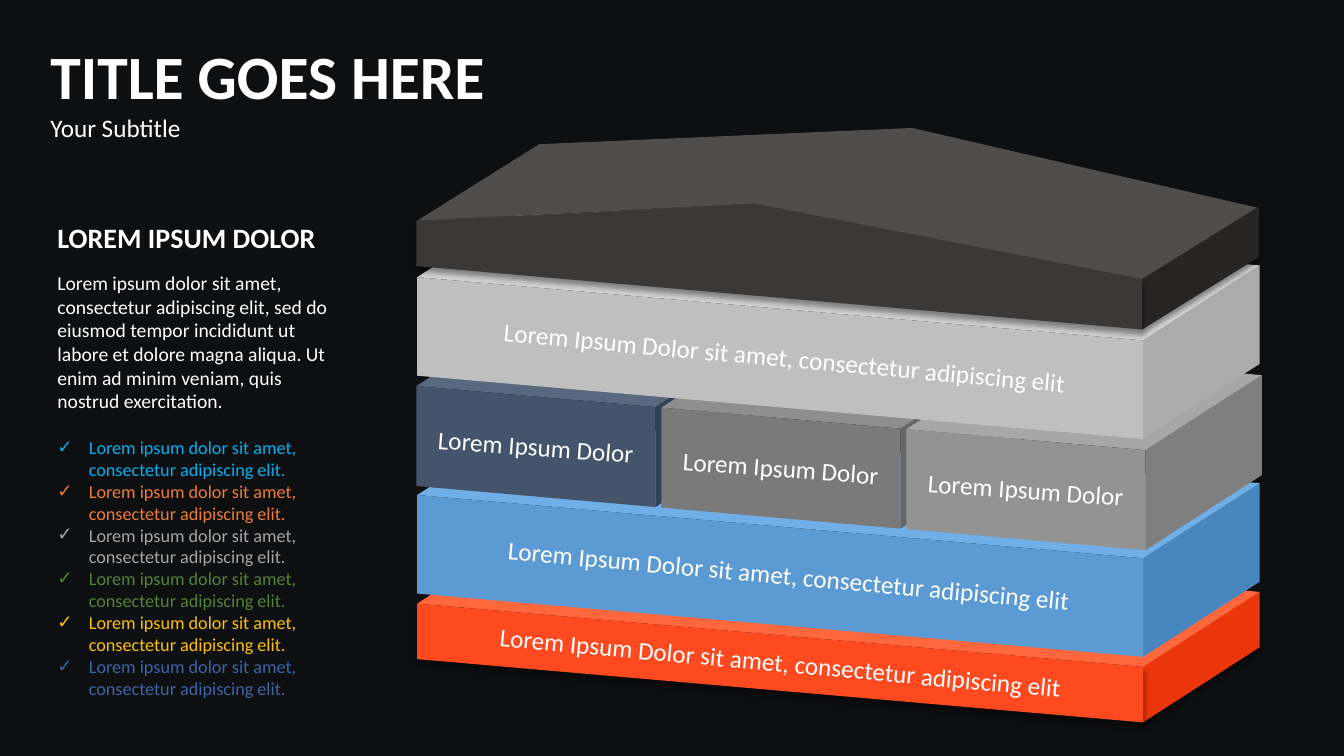
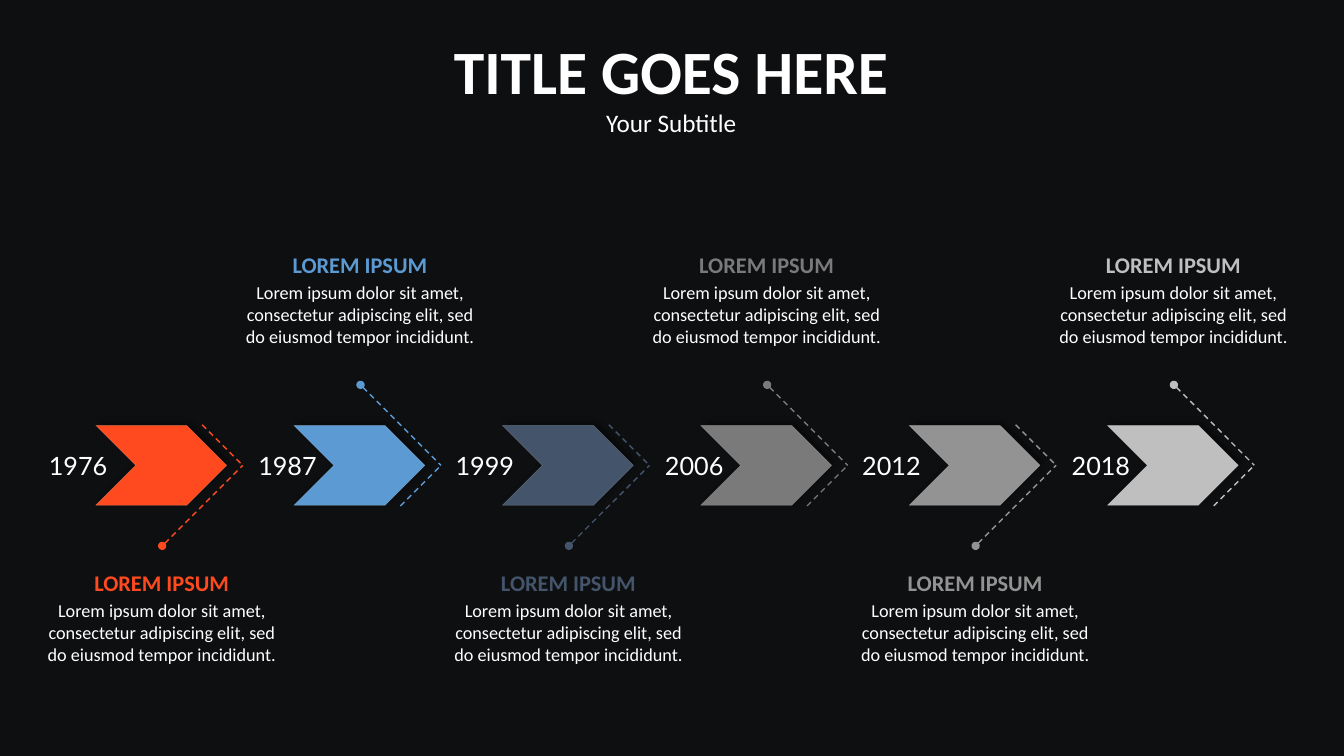
from lxml.etree import SubElement
from pptx import Presentation
from pptx.dml.color import RGBColor
from pptx.enum.dml import MSO_LINE_DASH_STYLE as Dash
from pptx.enum.shapes import MSO_CONNECTOR as Connector, MSO_SHAPE as Shape
from pptx.enum.text import MSO_ANCHOR as Anchor, MSO_AUTO_SIZE as AutoSize, PP_ALIGN as Align
from pptx.oxml.ns import qn
from pptx.util import Pt

BACKGROUND = RGBColor(0x0E, 0x0F, 0x11)
WHITE = RGBColor(0xFF, 0xFF, 0xFF)
ORANGE = RGBColor(0xFE, 0x4A, 0x1E)
ORANGE_TOP = RGBColor(0xFF, 0x68, 0x3C)
ORANGE_SIDE = RGBColor(0xEA, 0x36, 0x0A)
BLUE = RGBColor(0x5C, 0x9A, 0xD3)
BLUE_TOP = RGBColor(0x70, 0xAE, 0xE7)
BLUE_SIDE = RGBColor(0x48, 0x86, 0xBF)
SLATE = RGBColor(0x44, 0x54, 0x6B)
SLATE_TOP = RGBColor(0x58, 0x68, 0x7F)
SLATE_SIDE = RGBColor(0x30, 0x40, 0x57)
DARK_GRAY = RGBColor(0x7A, 0x7A, 0x7A)
DARK_GRAY_TOP = RGBColor(0x8E, 0x8E, 0x8E)
DARK_GRAY_SIDE = RGBColor(0x66, 0x66, 0x66)
GRAY = RGBColor(0x93, 0x93, 0x93)
GRAY_TOP = RGBColor(0xA7, 0xA7, 0xA7)
GRAY_SIDE = RGBColor(0x7F, 0x7F, 0x7F)
SILVER = RGBColor(0xBF, 0xBF, 0xBF)
SILVER_TOP = RGBColor(0xD3, 0xD3, 0xD3)
SILVER_SIDE = RGBColor(0xAB, 0xAB, 0xAB)
ROOF_TOP = RGBColor(0x4F, 0x4C, 0x4C)
ROOF_FRONT = RGBColor(0x3B, 0x38, 0x38)
ROOF_SIDE = RGBColor(0x27, 0x24, 0x24)
BULLET_COLORS = [
    RGBColor(0x00, 0xB0, 0xF0), RGBColor(0xED, 0x7D, 0x31), RGBColor(0xA5, 0xA5, 0xA5),
    RGBColor(0x54, 0x82, 0x35), RGBColor(0xFF, 0xC0, 0x00), RGBColor(0x3E, 0x64, 0xA6),
]

TITLE = "TITLE GOES HERE"
SUBTITLE = "Your Subtitle"
SIDE_HEADING = "LOREM IPSUM DOLOR"
SIDE_TEXT = (
    "Lorem ipsum dolor sit amet, consectetur adipiscing elit, sed do eiusmod tempor "
    "incididunt ut labore et dolore magna aliqua. Ut enim ad minim veniam, quis nostrud "
    "exercitation."
)
BULLET_TEXT = "Lorem ipsum dolor sit amet, consectetur adipiscing elit."
LONG_LABEL = "Lorem Ipsum Dolor sit amet, consectetur adipiscing elit"
SHORT_LABEL = "Lorem Ipsum Dolor"
EVENT_HEADING = "LOREM IPSUM"
EVENT_TEXT = (
    "Lorem ipsum dolor sit amet, consectetur adipiscing elit, sed do eiusmod tempor incididunt."
)
EVENTS = [
    ("1976", ORANGE), ("1987", BLUE), ("1999", SLATE),
    ("2006", DARK_GRAY), ("2012", GRAY), ("2018", SILVER),
]

WIDE = {"left": 298, "width": 518.5, "drop": 45.2, "label": LONG_LABEL,
        "label_width": 438, "angle": 5.3}
NARROW = {"width": 170.7, "drop": 15, "height": 71.4, "label": SHORT_LABEL,
          "label_width": 164, "angle": 4.2, "shift": 0}
NARROW_COLORS = [
    (SLATE, SLATE_TOP, SLATE_SIDE),
    (DARK_GRAY, DARK_GRAY_TOP, DARK_GRAY_SIDE),
    (GRAY, GRAY_TOP, GRAY_SIDE),
]
BLOCKS = [
    {**WIDE, "top": 431.2, "height": 39.6, "shift": 0, "shadow": True,
     "colors": (ORANGE, ORANGE_TOP, ORANGE_SIDE)},
    {**WIDE, "top": 353.6, "height": 70.4, "shift": 6,
     "colors": (BLUE, BLUE_TOP, BLUE_SIDE)},
    *({**NARROW, "left": 297.4 + 175 * index, "top": 275.8 + 15.4 * index, "colors": colors}
      for index, colors in enumerate(NARROW_COLORS)),
    {**WIDE, "top": 198, "height": 70.4, "shift": 3,
     "colors": (SILVER, SILVER_TOP, SILVER_SIDE)},
]
DEPTH_X, DEPTH_Y = 83.2, -53.6
ROOF = [
    ([(897.5, 147.8), (899.3, 148.3), (899.3, 183.6), (815.8, 235.4), (815.8, 198.7)],
     ROOF_SIDE, True),
    ([(539.3, 145.2), (815.8, 198.7), (815.8, 235.4), (297.4, 190.1), (297.4, 157.7)],
     ROOF_FRONT, True),
    ([(651.6, 91.4), (897.8, 148.3), (815.8, 199.2), (539.3, 145.4), (298, 157.7),
      (385.2, 103)], ROOF_TOP, False),
]

CHEVRON_WIDTH, CHEVRON_HEIGHT = 93.6, 57
EVENT_LEFT, PAIR_PITCH, UPPER_SHIFT = 68.4, 290.5, 141.6
AXIS = 332.4


def set_attributes(target, values):
    for name, value in values.items():
        setattr(target, name, value)


def write(shape, entries, insets=None):
    frame = shape.text_frame
    set_attributes(frame, {"word_wrap": True, "auto_size": AutoSize.NONE,
                           "vertical_anchor": Anchor.TOP})
    set_attributes(frame, insets or {})
    for index, (text, color, font, layout) in enumerate(entries):
        paragraph = frame.paragraphs[0] if index == 0 else frame.add_paragraph()
        run = paragraph.add_run()
        run.text = text
        set_attributes(paragraph, {"space_before": Pt(0), **layout})
        set_attributes(run.font, {"name": "Calibri", "bold": False, **font})
        run.font.color.rgb = color
    return frame


def place(shape, left, top, width, height):
    set_attributes(shape, {"left": Pt(left), "top": Pt(top),
                           "width": Pt(width), "height": Pt(height)})


def add_text(slide, left, top, width, height, entries, insets=None):
    box = slide.shapes.add_textbox(Pt(left), Pt(top), Pt(width), Pt(height))
    write(box, entries, insets)
    return box


def set_title(slide, left, top, width, alignment):
    place(slide.shapes.title, left, top, width, 82)
    layout = {"alignment": alignment}
    write(slide.shapes.title, [
        (TITLE, WHITE, {"size": Pt(44), "bold": True}, layout),
        (SUBTITLE, WHITE, {"size": Pt(18)}, layout),
    ])


def set_bullet(paragraph, character=None):
    properties = paragraph._p.get_or_add_pPr()
    indent = Pt(22.5) if character else 0
    properties.set("marL", str(indent))
    properties.set("indent", str(-indent))
    if character:
        SubElement(properties, qn("a:buChar")).set("char", character)
    else:
        SubElement(properties, qn("a:buNone"))


def add_shadow(shape, direction):
    effects = shape.element.spPr.find(qn("a:effectLst"))
    shadow = SubElement(effects, qn("a:outerShdw"), blurRad=str(Pt(4)), dist=str(Pt(3)),
                        dir=str(direction * 60000), algn="ctr", rotWithShape="0")
    color = SubElement(shadow, qn("a:srgbClr"), val="000000")
    SubElement(color, qn("a:alpha"), val="40000")


def add_face(slide, points, color, shadow=False):
    corners = [(Pt(x), Pt(y)) for x, y in points]
    builder = slide.shapes.build_freeform(*corners[0])
    builder.add_line_segments(corners[1:], close=True)
    face = builder.convert_to_shape()
    face.shadow.inherit = False
    face.fill.solid()
    face.fill.fore_color.rgb = color
    face.line.fill.background()
    if shadow:
        add_shadow(face, 90)
    return face


def add_block(slide, block):
    left, top, height = block["left"], block["top"], block["height"]
    right, right_top = left + block["width"], top + block["drop"]
    front, lid, side = block["colors"]
    shadow = block.get("shadow", False)
    back_left, back_right = (left + DEPTH_X, top + DEPTH_Y), (right + DEPTH_X, right_top + DEPTH_Y)
    back_bottom = (back_right[0], back_right[1] + height)
    start, corner = (left, top), (right, right_top)
    bottom = (right, right_top + height)
    label_left = (left + right - block["label_width"]) / 2 + block["shift"]
    label_top = (top + right_top + height) / 2 - 14.6
    label = add_text(slide, label_left, label_top, block["label_width"], 29,
                     [(block["label"], WHITE, {"size": Pt(18)}, {"alignment": Align.CENTER})])
    label.rotation = block["angle"]
    pieces = [
        add_face(slide, [corner, back_right, back_bottom, bottom], side, shadow),
        add_face(slide, [start, back_left, back_right, corner], lid),
        add_face(slide, [start, corner, bottom, (left, top + height)], front, shadow),
        label,
    ]
    slide.shapes.add_group_shape(pieces)


def build_layers(presentation):
    slide = presentation.slides.add_slide(presentation.slide_layouts[1])
    set_title(slide, 28.8, 23.8, 468, Align.LEFT)
    for block in BLOCKS:
        add_block(slide, block)
    slide.shapes.add_group_shape([add_face(slide, *face) for face in ROOF])
    body = slide.placeholders[1]
    place(body, 33.8, 154, 222.5, 373)
    bullets = [(BULLET_TEXT, color, {"size": Pt(13)}, {"space_before": Pt(0 if index else 17)})
               for index, color in enumerate(BULLET_COLORS)]
    frame = write(body, [
        (SIDE_HEADING, WHITE, {"size": Pt(20), "bold": True}, {}),
        (SIDE_TEXT, WHITE, {"size": Pt(14)}, {"space_before": Pt(12.2)}),
        *bullets,
    ])
    for index, paragraph in enumerate(frame.paragraphs):
        set_bullet(paragraph, "✓" if index > 1 else None)


def add_dashes(slide, start, end, color, dot=False):
    line = slide.shapes.add_connector(Connector.STRAIGHT, *(Pt(value) for value in start + end))
    line.line.color.rgb = color
    set_attributes(line.line, {"width": Pt(1), "dash_style": Dash.DASH})
    properties = line.element.spPr
    if dot:
        SubElement(properties.find(qn("a:ln")), qn("a:headEnd"), type="oval")
    SubElement(properties, qn("a:effectLst"))


def add_chevron(slide, left, color):
    chevron = slide.shapes.add_shape(Shape.CHEVRON, Pt(left), Pt(AXIS - CHEVRON_HEIGHT / 2),
                                     Pt(CHEVRON_WIDTH), Pt(CHEVRON_HEIGHT))
    chevron.shadow.inherit = False
    chevron.fill.solid()
    chevron.fill.fore_color.rgb = color
    chevron.line.color.rgb = WHITE
    chevron.line.width = Pt(0.5)
    line_color = chevron.element.spPr.find(qn("a:ln")).find(".//" + qn("a:srgbClr"))
    SubElement(line_color, qn("a:alpha"), val="15000")
    add_shadow(chevron, 315)


def add_event(slide, index, year, color):
    pair, upper = divmod(index, 2)
    left = EVENT_LEFT + PAIR_PITCH * pair + UPPER_SHIFT * upper
    side = -1 if upper else 1
    tip = (left + 105, AXIS)
    add_chevron(slide, left, color)
    add_dashes(slide, (left + 76, AXIS - side * 29), tip, color)
    add_dashes(slide, (left + 47.5, AXIS + side * 57.5), tip, color, dot=True)
    centered = {"alignment": Align.CENTER}
    no_insets = dict.fromkeys(
        ["margin_left", "margin_top", "margin_right", "margin_bottom"], Pt(0))
    add_text(slide, left - 36.8, 179.3 if upper else 406.8, 167.8, 85, [
        (EVENT_HEADING, color, {"size": Pt(16), "bold": True}, centered),
        (EVENT_TEXT, WHITE, {"size": Pt(13)}, {**centered, "space_before": Pt(2.4)}),
    ], no_insets)
    add_text(slide, left - (33.8 if upper else 41.8), 318, 58.3, 29,
             [(year, WHITE, {"size": Pt(18), "name": "Lato"}, centered)])


def build_timeline(presentation):
    slide = presentation.slides.add_slide(presentation.slide_layouts[5])
    set_title(slide, 262.8, 20.2, 433.4, Align.CENTER)
    for index, (year, color) in enumerate(EVENTS):
        add_event(slide, index, year, color)


def main():
    presentation = Presentation()
    set_attributes(presentation, {"slide_width": Pt(960), "slide_height": Pt(540)})
    background = presentation.slide_master.background.fill
    background.solid()
    background.fore_color.rgb = BACKGROUND
    build_layers(presentation)
    build_timeline(presentation)
    presentation.save("out.pptx")


if __name__ == "__main__":
    main()
